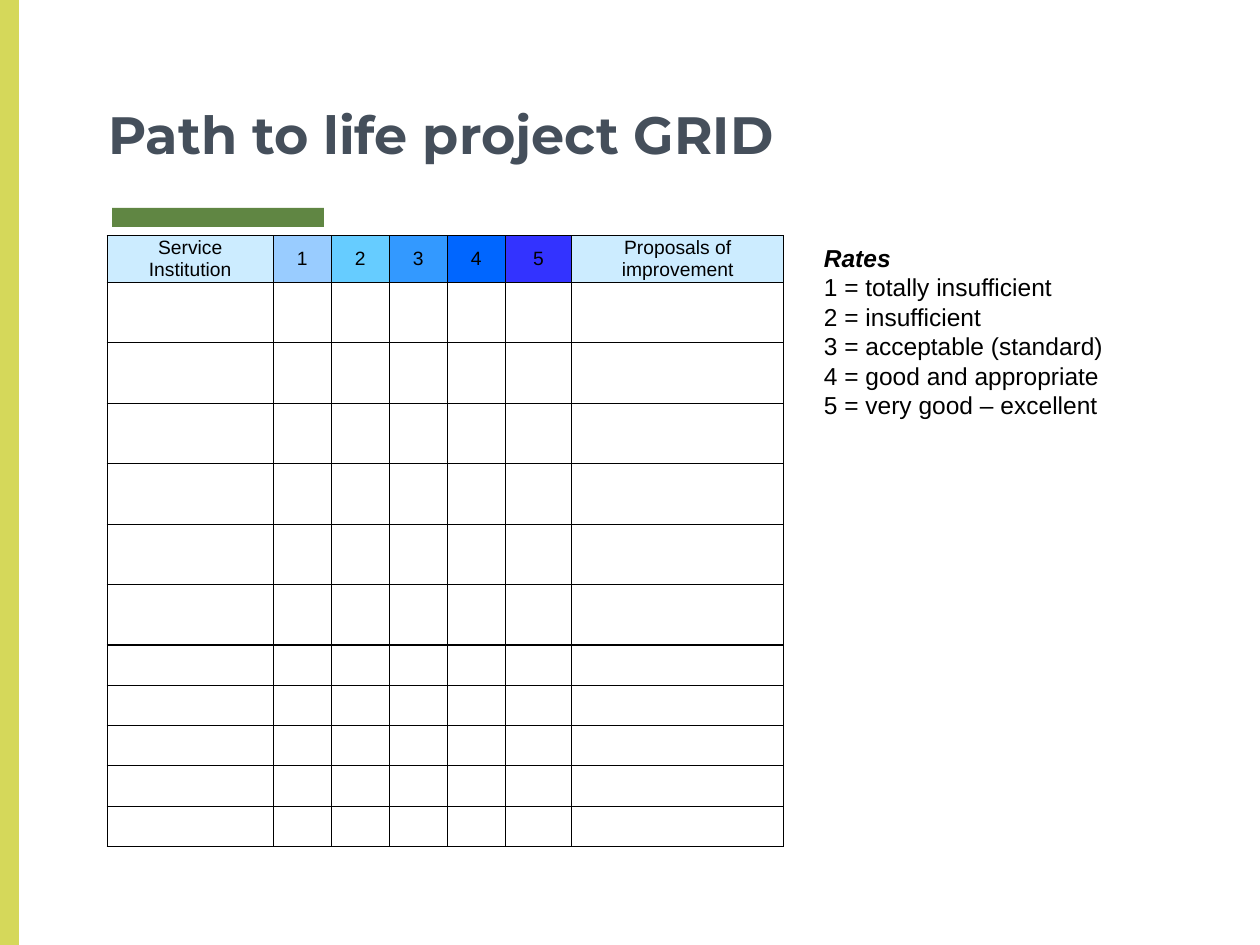
from dataclasses import dataclass

from lxml import etree
from pptx import Presentation
from pptx.dml.color import RGBColor
from pptx.enum import shapes, text
from pptx.oxml import ns
from pptx.util import Inches, Pt


@dataclass(frozen=True)
class Theme:
    """Colours, fonts and type sizes of the slide."""
    title: str = "454F5B"
    ink: str = "000000"
    accent: str = "608643"
    band: str = "D5D85A"
    header: str = "CCECFF"
    scale: tuple = ("99CCFF", "66CCFF", "3399FF", "0066FF", "3333FF")
    title_font: str = "Montserrat"
    body_font: str = "Arial"
    title_size: int = 30
    rates_size: int = 14
    table_size: int = 11
    border: float = 0.75


THEME = Theme()
HEADINGS = [["Service", "Institution"], ["1"], ["2"], ["3"], ["4"], ["5"],
            ["Proposals of improvement"]]
COLUMN_WIDTHS = [1.32] + [0.46] * 4 + [0.53, 1.68]
ROW_HEIGHTS = [0.37] + [0.48] * 6 + [0.32] * 5
RATES = ["totally insufficient", "insufficient", "acceptable (standard)",
         "good and appropriate", "very good – excellent"]


def add_run(paragraph, words, size, font, color, bold=False, italic=False):
    """Add one formatted run to a paragraph."""
    run = paragraph.add_run()
    run.text = words
    run.font.size = Pt(size)
    run.font.name = font
    run.font.color.rgb = RGBColor.from_string(color)
    run.font.bold = bold
    run.font.italic = italic


def add_lines(frame, lines, size, alignment, bold_first=False):
    """Write each line as a paragraph of the text frame."""
    for index, line in enumerate(lines):
        paragraph = frame.add_paragraph() if index else frame.paragraphs[0]
        paragraph.alignment = alignment
        strong = bold_first and index == 0
        add_run(paragraph, line, size, THEME.body_font, THEME.ink, strong, strong)


def add_bar(slide, box, color):
    """Place a plain filled rectangle in the box."""
    bar = slide.shapes.add_shape(shapes.MSO_SHAPE.RECTANGLE, *map(Inches, box))
    bar.shadow.inherit = False
    bar.fill.solid()
    bar.fill.fore_color.rgb = RGBColor.from_string(color)
    bar.line.fill.background()


def place_title(slide, box, words):
    """Move and format the title placeholder."""
    title = slide.shapes.title
    title.left, title.top, title.width, title.height = map(Inches, box)
    frame = title.text_frame
    frame.auto_size = text.MSO_AUTO_SIZE.NONE
    frame.word_wrap = True
    frame.vertical_anchor = text.MSO_ANCHOR.BOTTOM
    frame.margin_left = frame.margin_right = Inches(0.1)
    frame.margin_top = frame.margin_bottom = Inches(0.1)
    paragraph = frame.paragraphs[0]
    paragraph.alignment = text.PP_ALIGN.LEFT
    add_run(paragraph, words, THEME.title_size, THEME.title_font, THEME.title, bold=True)


def format_cell(cell, fill=None):
    """Set the margins, borders and fill of a table cell."""
    cell.margin_left = cell.margin_right = Inches(0.06)
    cell.margin_top = cell.margin_bottom = 0
    cell.vertical_anchor = text.MSO_ANCHOR.MIDDLE
    properties = cell._tc.get_or_add_tcPr()
    for side in ("a:lnL", "a:lnR", "a:lnT", "a:lnB"):
        line = etree.SubElement(properties, ns.qn(side), w=str(Pt(THEME.border)))
        solid = etree.SubElement(line, ns.qn("a:solidFill"))
        etree.SubElement(solid, ns.qn("a:srgbClr"), val=THEME.ink)
    if fill:
        cell.fill.solid()
        cell.fill.fore_color.rgb = RGBColor.from_string(fill)
    else:
        cell.fill.background()


def add_rating_table(slide, box):
    """Place the rating grid with its coloured heading row."""
    table = slide.shapes.add_table(
        len(ROW_HEIGHTS), len(COLUMN_WIDTHS), *map(Inches, box)).table
    table.first_row = table.horz_banding = False
    for column, width in zip(table.columns, COLUMN_WIDTHS):
        column.width = Inches(width)
    for row, height in zip(table.rows, ROW_HEIGHTS):
        row.height = Inches(height)
    fills = [THEME.header, *THEME.scale, THEME.header]
    for row_index, row in enumerate(table.rows):
        for cell, fill in zip(row.cells, fills):
            format_cell(cell, None if row_index else fill)
    for cell, lines in zip(table.rows[0].cells, HEADINGS):
        add_lines(cell.text_frame, lines, THEME.table_size, text.PP_ALIGN.CENTER)


def add_rates(slide, box):
    """Place the key to the rates."""
    frame = slide.shapes.add_textbox(*map(Inches, box)).text_frame
    frame.word_wrap = True
    frame.auto_size = text.MSO_AUTO_SIZE.SHAPE_TO_FIT_TEXT
    lines = [f"{rate} = {meaning}" for rate, meaning in enumerate(RATES, 1)]
    add_lines(frame, ["Rates", *lines], THEME.rates_size, text.PP_ALIGN.LEFT,
              bold_first=True)


def main():
    """Build and save the presentation."""
    presentation = Presentation()
    presentation.slide_width = Inches(10)
    presentation.slide_height = Inches(7.5)
    slide = presentation.slides.add_slide(presentation.slide_layouts[5])
    add_bar(slide, (0.89, 1.65, 1.68, 0.15), THEME.accent)
    add_bar(slide, (0, 0, 0.15, 7.5), THEME.band)
    place_title(slide, (0.76, 0, 8.49, 1.41), "Path to life project GRID")
    add_rating_table(slide, (0.85, 1.87, sum(COLUMN_WIDTHS), sum(ROW_HEIGHTS)))
    add_rates(slide, (6.44, 1.88, 2.71, 1.51))
    presentation.save("out.pptx")


if __name__ == "__main__":
    main()
